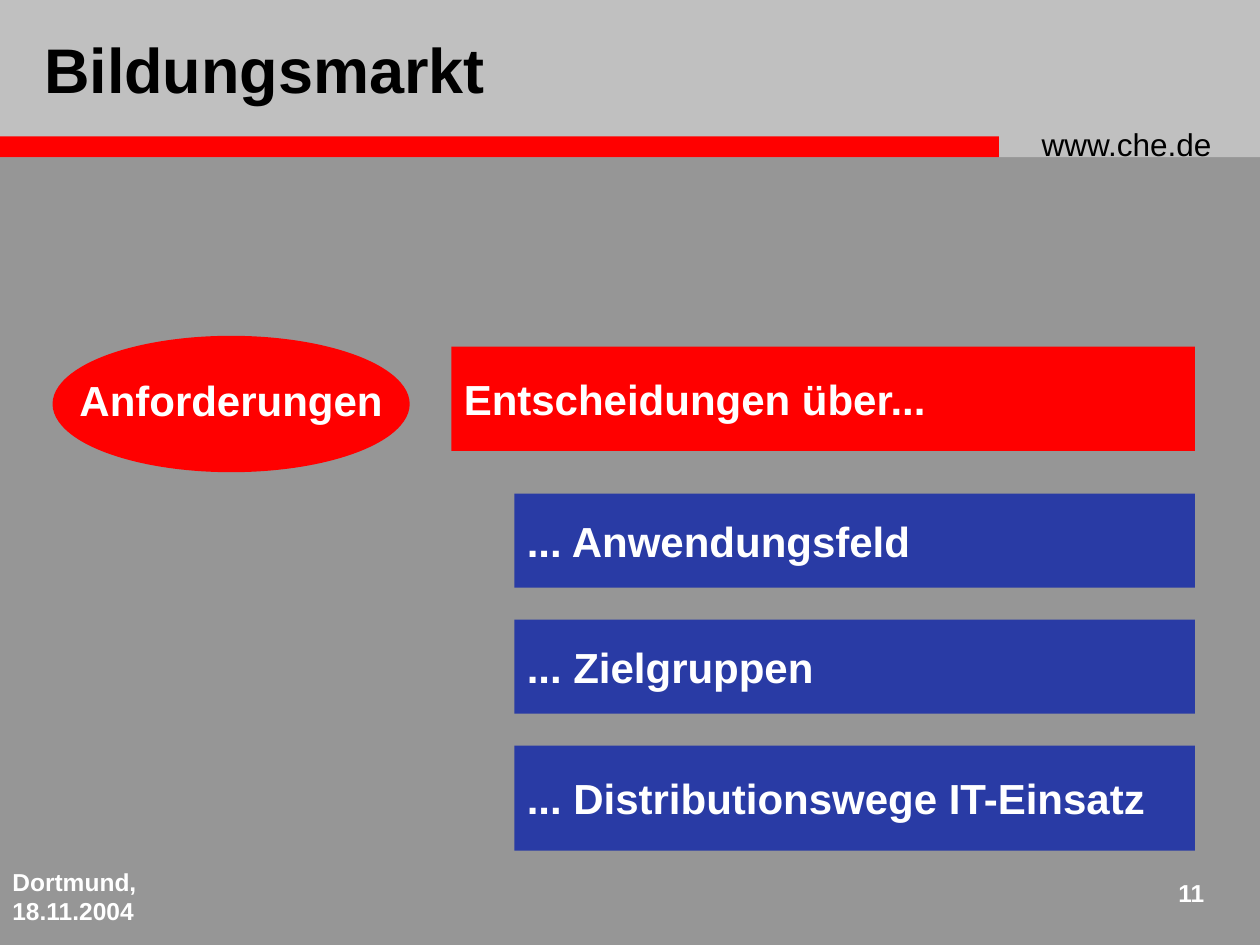
from dataclasses import dataclass

from pptx import Presentation
from pptx.dml.color import RGBColor
from pptx.enum import shapes, text
from pptx.util import Cm, Pt


@dataclass(frozen=True)
class Theme:
    font: str = "Arial"
    background: str = "969696"
    header: str = "C0C0C0"
    red: str = "FF0000"
    blue: str = "293BA5"
    dark: str = "000000"
    light: str = "FFFFFF"
    title: int = 36
    body: int = 24
    link: int = 18
    footer: int = 14


THEME = Theme()
RECT = shapes.MSO_SHAPE.RECTANGLE
OVAL = shapes.MSO_SHAPE.OVAL
LEFT, CENTER, RIGHT = text.PP_ALIGN.LEFT, text.PP_ALIGN.CENTER, text.PP_ALIGN.RIGHT
TOP, MIDDLE = text.MSO_ANCHOR.TOP, text.MSO_ANCHOR.MIDDLE


def write(sp, content, size, color, bold=True, align=LEFT, anchor=TOP, wrap=True):
    tf = sp.text_frame
    tf.word_wrap = wrap
    tf.vertical_anchor = anchor
    p = tf.paragraphs[0]
    p.text = content
    p.alignment = align
    p.font.name = THEME.font
    p.font.size = Pt(size)
    p.font.bold = bold
    p.font.color.rgb = RGBColor.from_string(color)


def add_block(s, box, color, kind=RECT):
    sp = s.shapes.add_shape(kind, *map(Cm, box))
    sp.shadow.inherit = False
    sp.fill.solid()
    sp.fill.fore_color.rgb = RGBColor.from_string(color)
    sp.line.fill.background()
    return sp


def add_label(s, box, content, size, color, **style):
    sp = s.shapes.add_textbox(*map(Cm, box))
    write(sp, content, size, color, **style)


def add_bar(s, box, content, color):
    sp = add_block(s, box, color)
    write(sp, content, THEME.body, THEME.light, anchor=MIDDLE)


def add_ellipse(s, box, content):
    sp = add_block(s, box, THEME.red, OVAL)
    write(sp, content, THEME.body, THEME.light, align=CENTER, anchor=MIDDLE, wrap=False)
    sp.text_frame.margin_bottom = Cm(0.3)


def add_frame(s):
    add_block(s, (0, 0, 25.4, 3.17), THEME.header)
    add_block(s, (0, 2.75, 20.14, 0.42), THEME.red)
    add_label(s, (20.75, 2.39, 4.45, 1.02), "www.che.de", THEME.link, THEME.dark, bold=False)
    add_label(s, (0, 17.35, 5.28, 1.27), "Dortmund, 18.11.2004", THEME.footer, THEME.light)
    add_label(s, (23.06, 17.58, 1.47, 1.07), "11", THEME.footer, THEME.light, align=RIGHT)


def add_decisions(s):
    add_bar(s, (9.1, 6.99, 14.99, 2.1), "Entscheidungen über...", THEME.red)
    topics = [
        ("... Anwendungsfeld", 1.9),
        ("... Zielgruppen", 1.9),
        ("... Distributionswege IT-Einsatz", 2.12),
    ]
    for i, (topic, height) in enumerate(topics):
        add_bar(s, (10.37, 9.95 + 2.54 * i, 13.72, height), topic, THEME.blue)


def main():
    prs = Presentation()
    prs.slide_width, prs.slide_height = Cm(25.4), Cm(19.05)
    s = prs.slides.add_slide(prs.slide_layouts[6])
    s.background.fill.solid()
    s.background.fill.fore_color.rgb = RGBColor.from_string(THEME.background)
    add_frame(s)
    add_ellipse(s, (1.06, 6.77, 7.2, 2.75), "Anforderungen")
    add_decisions(s)
    add_label(s, (0.64, 0.42, 14.43, 1.9), "Bildungsmarkt", THEME.title, THEME.dark, anchor=MIDDLE)
    prs.save("out.pptx")


if __name__ == "__main__":
    main()
